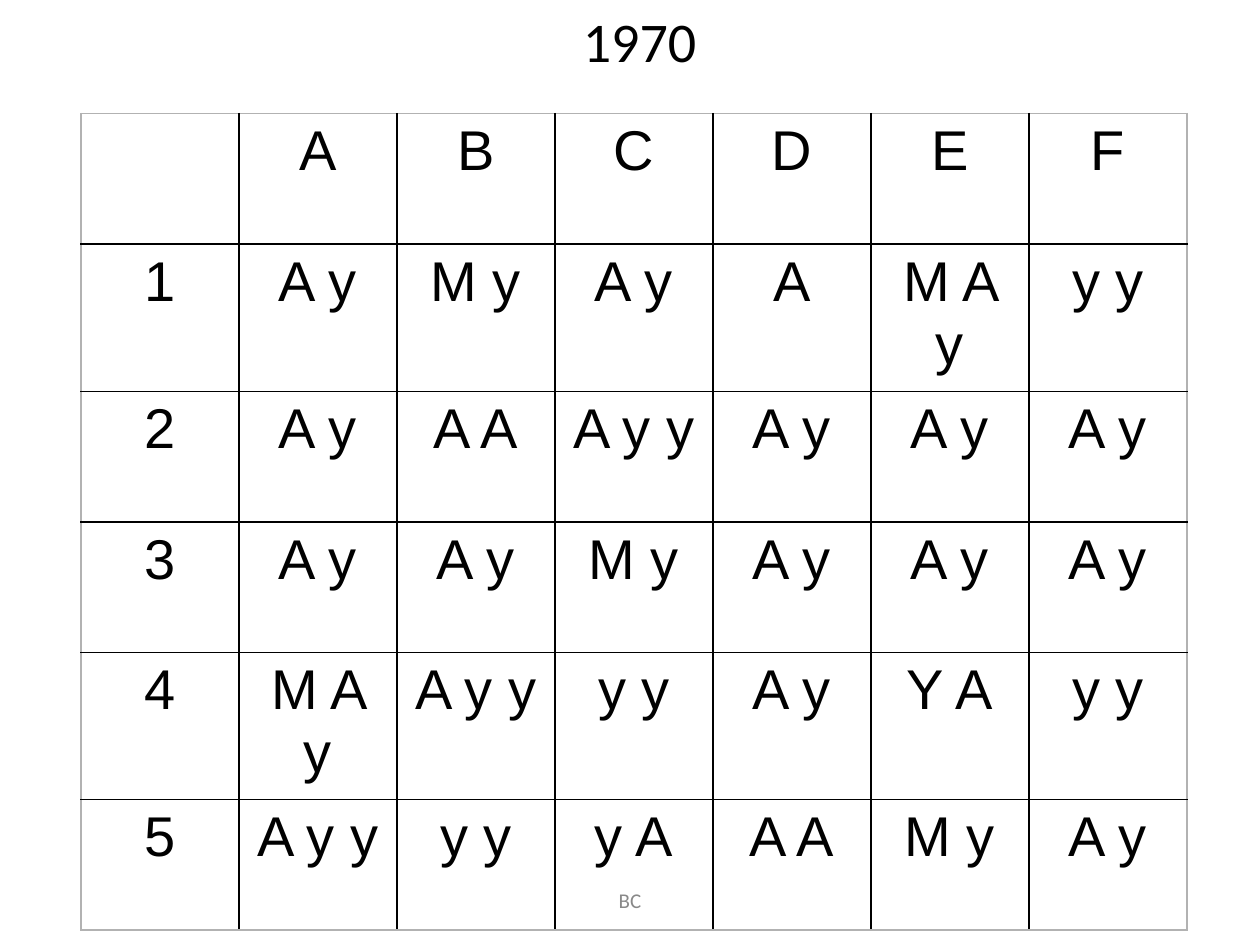
from dataclasses import dataclass

from lxml import etree
from pptx import Presentation
from pptx import util as u
from pptx.dml.color import RGBColor
from pptx.enum import text
from pptx.oxml.ns import qn


@dataclass
class Theme:
    ink: str = "000000"
    edge: str = "B2B2B2"
    mute: str = "898989"
    head: str = "Calibri"
    body: str = "Arial"
    big: int = 32
    small: int = 12
    rule: int = 1


class Deck:
    def __init__(self, theme, wide, high):
        self.theme = theme
        self.prs = Presentation()
        self.prs.slide_width, self.prs.slide_height = u.Cm(wide), u.Cm(high)
        self.slide = self.prs.slides.add_slide(self.prs.slide_layouts[6])

    def style(self, para, face, size, color, align):
        para.alignment = align
        para.font.name = face
        para.font.size = u.Pt(size)
        para.font.color.rgb = RGBColor.from_string(color)

    def label(self, box, words, size, color, wrap=True,
              align=text.PP_ALIGN.CENTER, anchor=text.MSO_ANCHOR.MIDDLE):
        frame = self.slide.shapes.add_textbox(*map(u.Cm, box)).text_frame
        frame.word_wrap = wrap
        frame.vertical_anchor = anchor
        if not wrap:
            frame.auto_size = text.MSO_AUTO_SIZE.SHAPE_TO_FIT_TEXT
        para = frame.paragraphs[0]
        para.text = words
        self.style(para, self.theme.head, size, color, align)

    def border(self, cell, sides):
        """Draw the cell's lines; sides maps L, R, T and B to colours."""
        props = cell._tc.get_or_add_tcPr()
        for spot, (side, color) in enumerate(sides.items()):
            line = etree.Element(qn(f"a:ln{side}"), w=str(u.Pt(self.theme.rule)))
            fill = etree.SubElement(line, qn("a:solidFill"))
            etree.SubElement(fill, qn("a:srgbClr"), val=color)
            props.insert(spot, line)

    def grid(self, box, rows):
        t = self.theme
        down, over = len(rows), len(rows[0])
        table = self.slide.shapes.add_table(down, over, *map(u.Cm, box)).table
        table.first_row = table.horz_banding = False
        for r, row in enumerate(rows):
            for c, words in enumerate(row):
                cell = table.cell(r, c)
                cell.fill.background()
                para = cell.text_frame.paragraphs[0]
                para.text = words
                self.style(para, t.body, t.big, t.ink, text.PP_ALIGN.CENTER)
                outer = {"L": c == 0, "R": c == over - 1,
                         "T": r == 0, "B": r == down - 1}
                self.border(cell, {side: t.edge if out else t.ink
                                   for side, out in outer.items()})


ROWS = [
    ["", "A", "B", "C", "D", "E", "F"],
    ["1", "A y", "M y", "A y", "A", "M A y", "y y"],
    ["2", "A y", "A A", "A y y", "A y", "A y", "A y"],
    ["3", "A y", "A y", "M y", "A y", "A y", "A y"],
    ["4", "M A y", "A y y", "y y", "A y", "Y A", "y y"],
    ["5", "A y y", "y y", "y A", "A A", "M y", "A y"],
]


def main():
    theme = Theme()
    deck = Deck(theme, 25.4, 19.05)
    deck.label((8.68, 17.65, 8.04, 1.01), "BC", theme.small, theme.mute)
    deck.grid((1.63, 2.29, 22.3, 15.8), ROWS)
    deck.label((11.5, 0, 2.8, 1.6), "1970", theme.big, theme.ink, wrap=False,
               align=text.PP_ALIGN.LEFT, anchor=text.MSO_ANCHOR.TOP)
    deck.prs.save("out.pptx")


if __name__ == "__main__":
    main()
